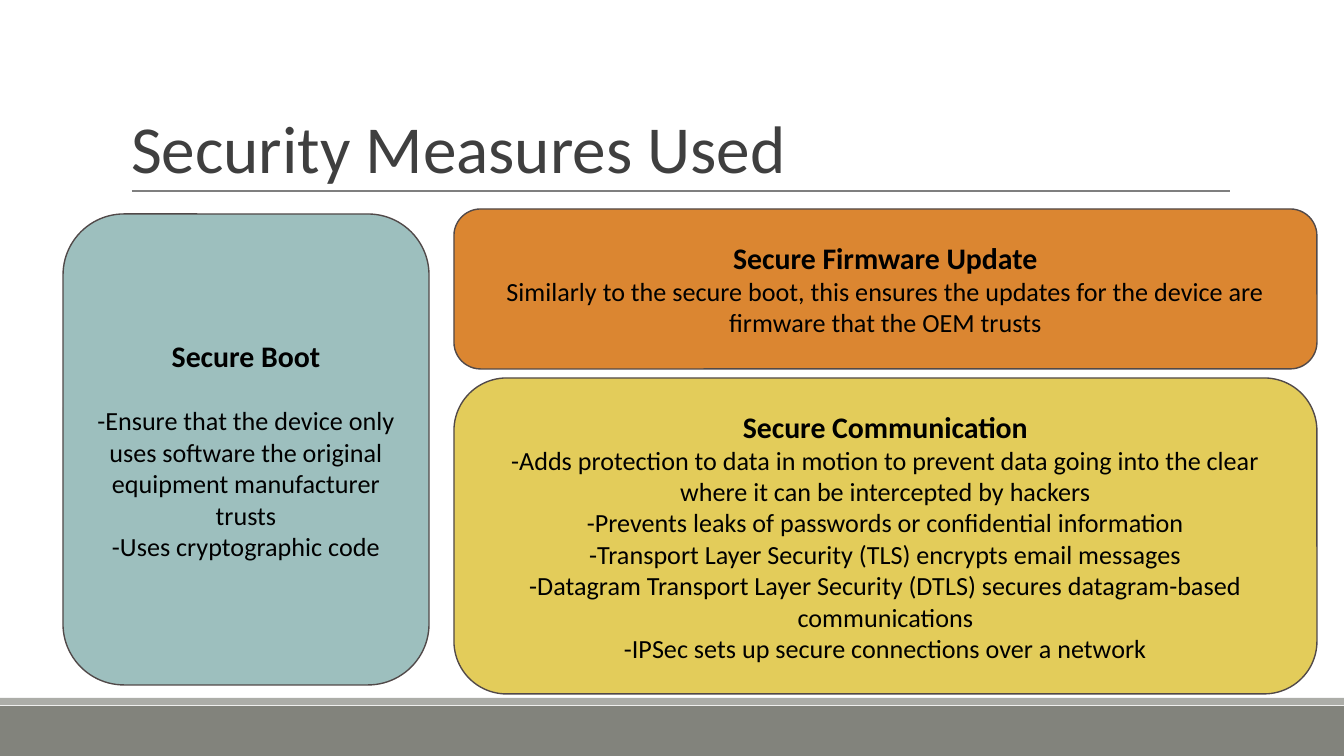
import pptx
import pptx.util
import pptx.dml.color
import pptx.enum.shapes
import pptx.enum.text
import pptx.oxml

SLIDE_WIDTH, SLIDE_HEIGHT = 1344, 756
EMU_PER_PX = pptx.util.Inches(10) / SLIDE_WIDTH
FONT = "Calibri"
OUTLINE = "514949"
RIGHT_LEFT, RIGHT_WIDTH = 454, 863

# Heading, lines, position (left, top, width, height), fill, gap below heading in points
MEASURES = [
    ("Secure Boot", [
        "-Ensure that the device only uses software the original equipment manufacturer trusts",
        "-Uses cryptographic code",
    ], (63, 214, 366, 471), "9DBFBE", 17),
    ("Secure Firmware Update", [
        "Similarly to the secure boot, this ensures the updates for the device are "
        "firmware that the OEM trusts",
    ], (RIGHT_LEFT, 209, RIGHT_WIDTH, 160), "DB8631", 0),
    ("Secure Communication", [
        "-Adds protection to data in motion to prevent data going into the clear "
        "where it can be intercepted by hackers",
        "-Prevents leaks of passwords or confidential information",
        "-Transport Layer Security (TLS) encrypts email messages",
        "-Datagram Transport Layer Security (DTLS) secures datagram-based communications",
        "-IPSec sets up secure connections over a network",
    ], (RIGHT_LEFT, 378, RIGHT_WIDTH, 316), "E3CC5A", 0),
]


def px(length):
    return pptx.util.Emu(round(length * EMU_PER_PX))


def color(hex_code):
    return pptx.dml.color.RGBColor.from_string(hex_code)


def set_font(paragraph, size, hex_code, bold=False):
    for run in paragraph.runs:
        run.font.name = FONT
        run.font.size = pptx.util.Pt(size)
        run.font.bold = bold
        run.font.color.rgb = color(hex_code)


def set_frame(frame, anchor, side, end):
    frame.word_wrap = True
    frame.auto_size = pptx.enum.text.MSO_AUTO_SIZE.NONE
    frame.vertical_anchor = anchor
    frame.margin_left = frame.margin_right = px(side)
    frame.margin_top = frame.margin_bottom = px(end)


def add_block(slide, kind, place, fill, outline=None):
    block = slide.shapes.add_shape(kind, *map(px, place))
    block.shadow.inherit = False
    block.fill.solid()
    block.fill.fore_color.rgb = color(fill)
    if outline:
        block.line.color.rgb = color(outline)
        block.line.width = pptx.util.Pt(0.75)
    else:
        block.line.fill.background()
    return block


def add_rule(slide, left, right, y):
    rule = slide.shapes.add_connector(
        pptx.enum.shapes.MSO_CONNECTOR.STRAIGHT, px(left), px(y), px(right), px(y))
    rule.line.color.rgb = color("7F7F7F")
    rule.line.width = pptx.util.Pt(0.75)
    rule._element.spPr.append(pptx.oxml.parse_xml(
        '<a:effectLst xmlns:a="http://schemas.openxmlformats.org/drawingml/2006/main"/>'))


def set_title(slide, text):
    title = slide.shapes.title
    title.left, title.top, title.width, title.height = map(px, (121, 32, 1109, 160))
    set_frame(title.text_frame, pptx.enum.text.MSO_ANCHOR.BOTTOM, 10, 5)
    title.text_frame.text = text
    heading = title.text_frame.paragraphs[0]
    heading.alignment = pptx.enum.text.PP_ALIGN.LEFT
    heading.line_spacing = 0.85
    set_font(heading, 36, "3F3F3F")


def add_measure(slide, heading, lines, place, fill, gap):
    card = add_block(slide, pptx.enum.shapes.MSO_SHAPE.ROUNDED_RECTANGLE,
                     place, fill, OUTLINE)
    frame = card.text_frame
    set_frame(frame, pptx.enum.text.MSO_ANCHOR.MIDDLE, 13, 13)
    frame.text = "\n".join([heading, *lines])
    for index, paragraph in enumerate(frame.paragraphs):
        is_heading = index == 0
        paragraph.alignment = pptx.enum.text.PP_ALIGN.CENTER
        set_font(paragraph, 16 if is_heading else 14, "000000", is_heading)
    if gap:
        frame.paragraphs[0].space_after = pptx.util.Pt(gap)


def main():
    deck = pptx.Presentation()
    deck.slide_width, deck.slide_height = px(SLIDE_WIDTH), px(SLIDE_HEIGHT)
    slide = deck.slides.add_slide(deck.slide_layouts[5])

    # Footer bands
    rectangle = pptx.enum.shapes.MSO_SHAPE.RECTANGLE
    add_block(slide, rectangle, (0, 706, SLIDE_WIDTH, 50), "82837C")
    add_block(slide, rectangle, (0, 698, SLIDE_WIDTH, 7), "ACADA8")

    # Title and its rule
    add_rule(slide, 132, 1230, 191)
    set_title(slide, "Security Measures Used")

    # Security measures
    for measure in MEASURES:
        add_measure(slide, *measure)

    deck.save("out.pptx")


if __name__ == "__main__":
    main()
